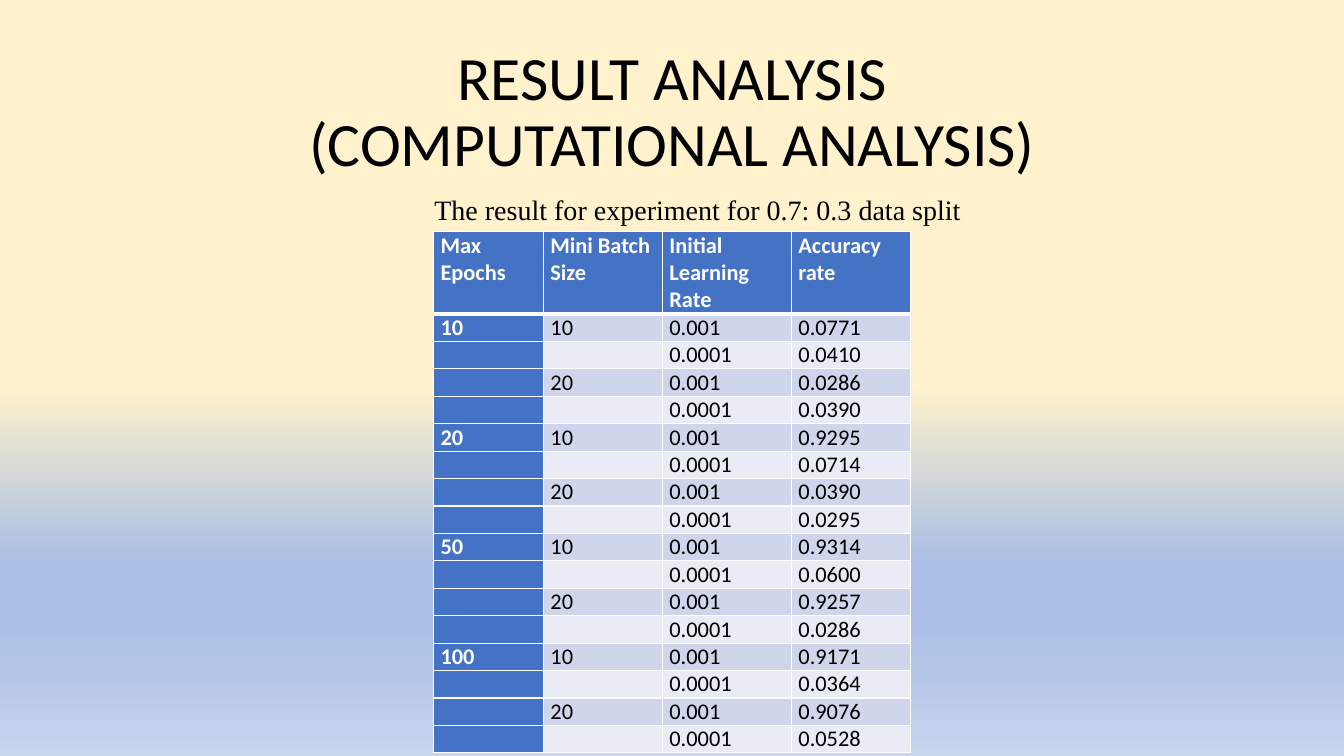
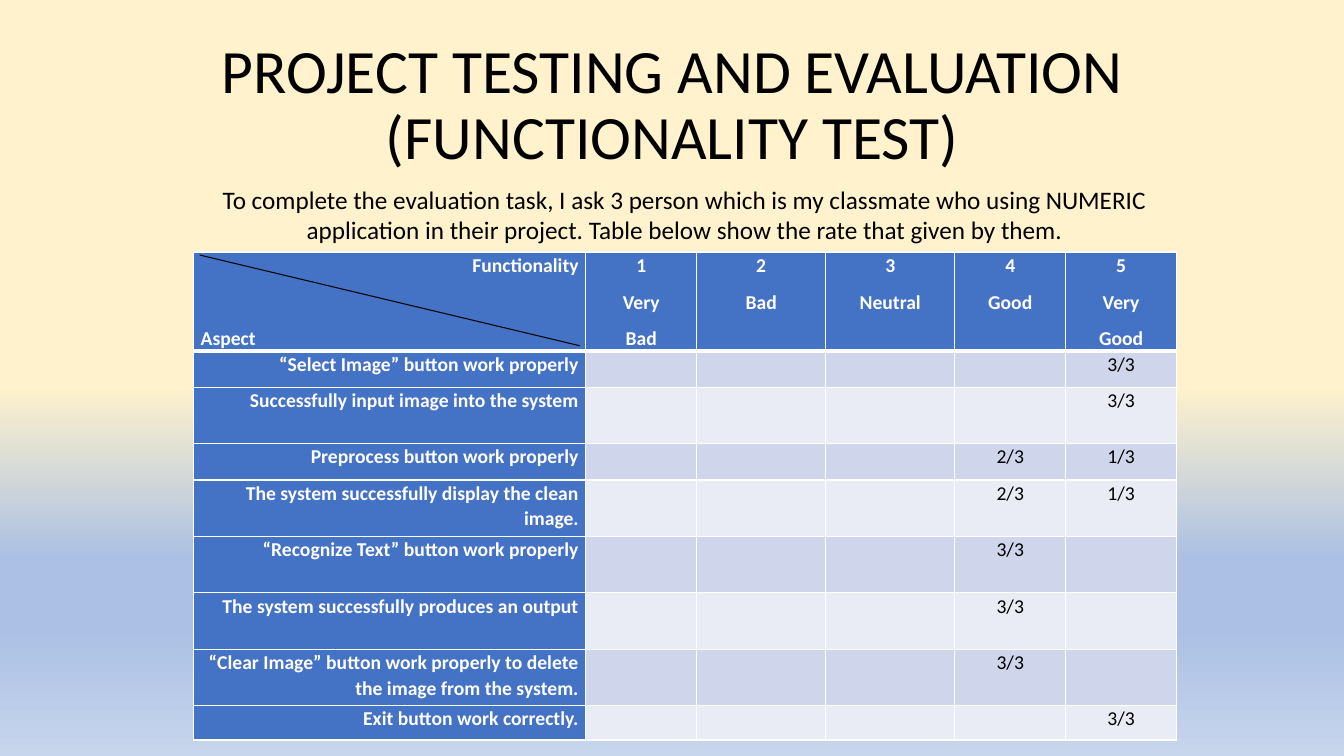
"""Build two slides that report computational results and a functionality test."""
from copy import deepcopy
from dataclasses import dataclass

from lxml.etree import SubElement, fromstring
from pptx import Presentation
from pptx.dml.color import RGBColor
from pptx.enum.shapes import MSO_CONNECTOR
from pptx.enum.text import MSO_ANCHOR, MSO_AUTO_SIZE, PP_ALIGN
from pptx.oxml.ns import nsdecls, qn
from pptx.util import Inches, Pt


@dataclass(frozen=True)
class Theme:
    black: str = "000000"
    white: str = "FFFFFF"
    header: str = "4472C4"
    bands: tuple = ("CFD5EA", "E9EBF5")
    gradient: tuple = ((51, "FFF2CC"), (74, "ABC0E4"), (83, "ABC0E4"), (100, "C7D5ED"))
    font: str = "Calibri"
    caption_font: str = "Times New Roman"
    title_size: int = 44
    caption_size: int = 20
    intro_size: int = 18
    result_size: int = 16
    rating_size: int = 14


theme = Theme()


def write_text(frame, text, size, font=theme.font, color=theme.black, bold=False,
               align=PP_ALIGN.LEFT, spacing=1.0, after=0):
    frame.text = text
    for paragraph in frame.paragraphs:
        paragraph.alignment = align
        paragraph.line_spacing = spacing
        paragraph.space_after = Pt(after)
        for run in paragraph.runs:
            run.font.name = font
            run.font.size = Pt(size)
            run.font.bold = bold
            run.font.color.rgb = RGBColor.from_string(color)
        SubElement(paragraph._p, qn("a:endParaRPr"), sz=str(size * 100))


def add_styled_table(slide, rows, left, top, widths, heights, size, aligns, **text_format):
    frame = slide.shapes.add_table(len(rows), len(widths), Inches(left), Inches(top),
                                   Inches(sum(widths)), Inches(sum(heights)))
    table = frame.table
    table.first_col = True
    for column, width in zip(table.columns, widths):
        column.width = Inches(width)
    for row_index, (values, height) in enumerate(zip(rows, heights)):
        table.rows[row_index].height = Inches(height)
        for column_index, value in enumerate(values):
            cell = table.cell(row_index, column_index)
            is_header = row_index == 0 or column_index == 0
            cell.margin_left = cell.margin_right = Inches(0.07)
            cell.margin_top = cell.margin_bottom = 0
            write_text(cell.text_frame, value, size, bold=is_header,
                       color=theme.white if is_header else theme.black,
                       align=aligns[column_index], **text_format)
            cell.fill.solid()
            fill_color = theme.header if is_header else theme.bands[(row_index - 1) % 2]
            cell.fill.fore_color.rgb = RGBColor.from_string(fill_color)
            border_widths = {"lnL": 1, "lnR": 1, "lnT": 3 if row_index == 1 else 1,
                             "lnB": 3 if row_index == 0 else 1}
            for position, (side, points) in enumerate(border_widths.items()):
                cell._tc.get_or_add_tcPr().insert(position, fromstring(
                    f'<a:{side} {nsdecls("a")} w="{Pt(points)}"><a:solidFill>'
                    f'<a:srgbClr val="{theme.white}"/></a:solidFill></a:{side}>'))
    return table


presentation = Presentation()
presentation.slide_width = Inches(13.33)
presentation.slide_height = Inches(7.5)

master = presentation.slide_master
background_fill = master.background.fill
background_fill.gradient()
background_fill.gradient_angle = 270
stop_list = next(master.element.iter(qn("a:gsLst")))
stop_list.append(deepcopy(stop_list[0]))
stop_list.append(deepcopy(stop_list[0]))
for stop, (percent, color) in zip(background_fill.gradient_stops, theme.gradient):
    stop.position = percent / 100
    stop.color.rgb = RGBColor.from_string(color)

slides = []
for title_text, title_top in (
    ("RESULT ANALYSIS\v(COMPUTATIONAL ANALYSIS)", 0.4),
    ("PROJECT TESTING AND EVALUATION\v(FUNCTIONALITY TEST)", 0.33),
):
    slide = presentation.slides.add_slide(presentation.slide_layouts.get_by_name("Title Only"))
    title = slide.shapes.title
    title.left, title.top = Inches(0.92), Inches(title_top)
    title.width, title.height = Inches(11.5), Inches(1.45)
    title.text_frame.auto_size = MSO_AUTO_SIZE.NONE
    title.text_frame.vertical_anchor = MSO_ANCHOR.MIDDLE
    write_text(title.text_frame, title_text, theme.title_size,
               align=PP_ALIGN.CENTER, spacing=0.9)
    slides.append(slide)
result_slide, evaluation_slide = slides

accuracies = (
    "0.0771", "0.0410", "0.0286", "0.0390",
    "0.9295", "0.0714", "0.0390", "0.0295",
    "0.9314", "0.0600", "0.9257", "0.0286",
    "0.9171", "0.0364", "0.9076", "0.0528",
)
epochs = ("10", "20", "50", "100")
batch_sizes = ("10", "", "20", "")
learning_rates = ("0.001", "0.0001")
result_rows = [("Max Epochs", "Mini Batch Size", "Initial Learning Rate", "Accuracy rate")]
for index, accuracy in enumerate(accuracies):
    epoch = epochs[index // 4] if index % 4 == 0 else ""
    result_rows.append((epoch, batch_sizes[index % 4], learning_rates[index % 2], accuracy))
add_styled_table(result_slide, result_rows, 4.3, 2.3, (1.09, 1.18, 1.28, 1.18),
                 [0.81] + [0.27] * len(accuracies), theme.result_size, [PP_ALIGN.LEFT] * 4)

caption = result_slide.shapes.add_textbox(Inches(3.69), Inches(1.86), Inches(5.96), Inches(0.44))
caption.text_frame.word_wrap = False
caption.text_frame.vertical_anchor = MSO_ANCHOR.MIDDLE
caption.text_frame.margin_left = Inches(0.6)
write_text(caption.text_frame, "The result for experiment for 0.7: 0.3 data split",
           theme.caption_size, font=theme.caption_font, align=PP_ALIGN.CENTER)

ratings = (
    ("“Select Image” button work properly", "", "3/3", 0.36),
    ("Successfully input image into the system", "", "3/3", 0.56),
    ("Preprocess button work properly", "2/3", "1/3", 0.36),
    ("The system successfully display the clean image.", "2/3", "1/3", 0.56),
    ("“Recognize Text” button work properly", "3/3", "", 0.56),
    ("The system successfully produces an output", "3/3", "", 0.56),
    ("“Clear Image” button work properly to delete the image from the system.",
     "3/3", "", 0.56),
    ("Exit button work correctly.", "", "3/3", 0.34),
)
rating_rows = [("Functionality\nAspect", "1\nVery\nBad", "2\nBad", "3\nNeutral",
                "4\nGood", "5\nVery\nGood")]
rating_rows += [(aspect, "", "", "", good, very_good) for aspect, good, very_good, height in ratings]
rating_table = add_styled_table(
    evaluation_slide, rating_rows, 1.92, 2.5, (3.89, 1.1, 1.28, 1.28, 1.1, 1.1),
    [0.97] + [rating[-1] for rating in ratings], theme.rating_size,
    [PP_ALIGN.RIGHT] + [PP_ALIGN.CENTER] * 5, spacing=1.07, after=8)
aspect_label = rating_table.cell(0, 0).text_frame.paragraphs[1]
aspect_label.alignment = PP_ALIGN.LEFT
aspect_label.space_before = Pt(26)

diagonal = evaluation_slide.shapes.add_connector(
    MSO_CONNECTOR.STRAIGHT, Inches(1.98), Inches(2.53), Inches(5.75), Inches(3.43))
diagonal.line.color.rgb = RGBColor.from_string(theme.black)
diagonal.line.width = Pt(0.75)
SubElement(diagonal.element.spPr, qn("a:effectLst"))

introduction = evaluation_slide.shapes.add_textbox(
    Inches(1.8), Inches(1.78), Inches(9.98), Inches(0.71))
introduction.text_frame.word_wrap = True
write_text(introduction.text_frame,
           "To complete the evaluation task, I ask 3 person which is my classmate who using "
           "NUMERIC application in their project. Table below show the rate that given by them.",
           theme.intro_size, align=PP_ALIGN.CENTER)

presentation.save("out.pptx")
